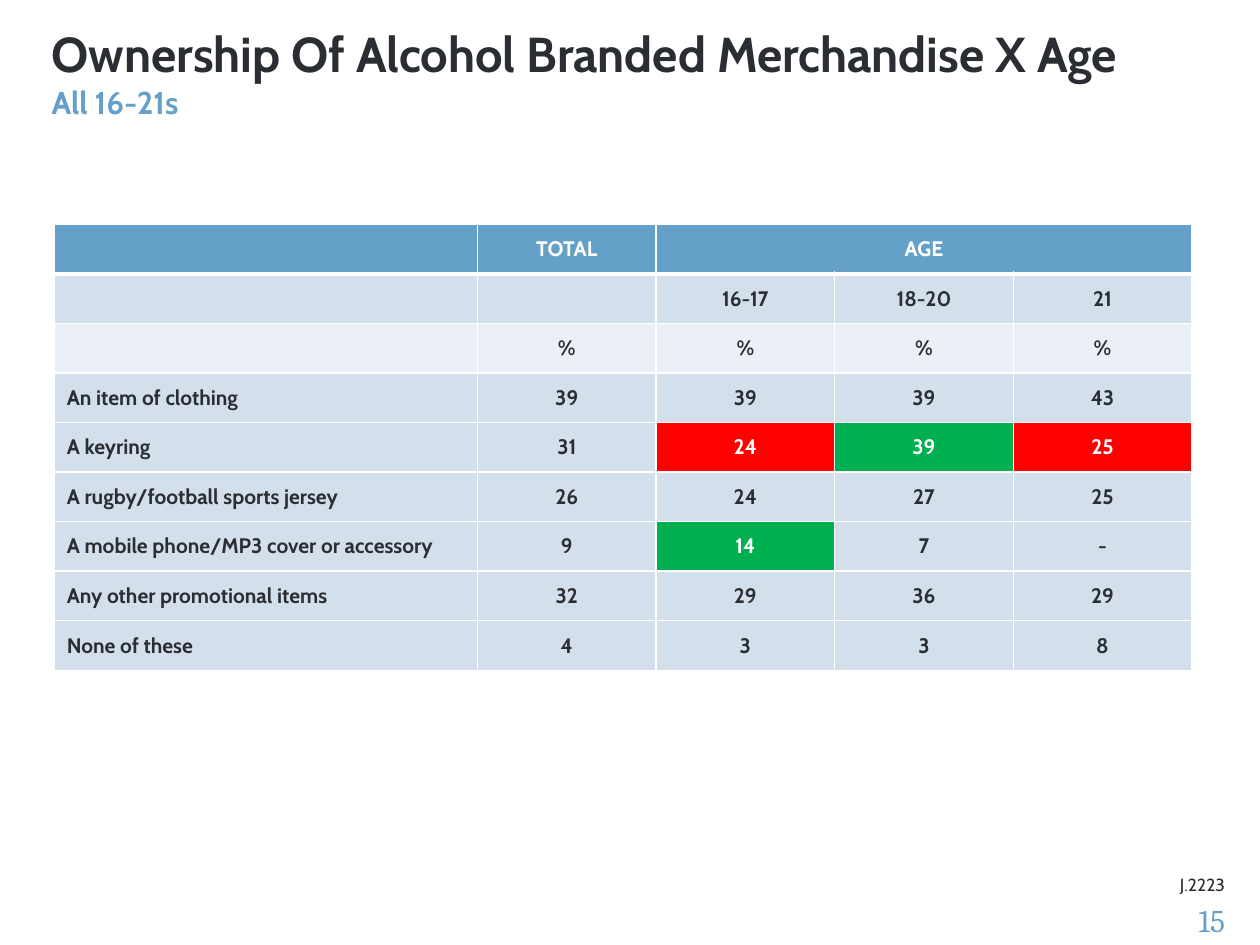
from pptx import Presentation
from pptx.dml.color import RGBColor
from pptx.enum.text import MSO_ANCHOR, PP_ALIGN
from pptx.oxml.ns import qn
from pptx.util import Inches, Pt
from lxml.etree import SubElement

COLORS = {
    "ink": "2A2E33",
    "blue": "64A0C8",
    "band": "D3DFEB",
    "pale": "EAF0F5",
    "white": "FFFFFF",
    "low": "FF0000",
    "high": "00B050",
}
ROWS = [
    ["", "TOTAL", "AGE", "", ""],
    ["", "", "16-17", "18-20", "21"],
    ["", "%", "%", "%", "%"],
    ["An item of clothing", "39", "39", "39", "43"],
    ["A keyring", "31", "24", "39", "25"],
    ["A rugby/football sports jersey", "26", "24", "27", "25"],
    ["A mobile phone/MP3 cover or accessory", "9", "14", "7", "-"],
    ["Any other promotional items", "32", "29", "36", "29"],
    ["None of these", "4", "3", "3", "8"],
]
ROW_FILLS = {0: "blue", 2: "pale"}
HIGHLIGHTS = {(4, 2): "low", (4, 3): "high", (4, 4): "low", (6, 2): "high"}


def rgb(name):
    return RGBColor.from_string(COLORS[name])


def add_span(para, text, size, color, bold=False, font="Cabin"):
    span = para.add_run()
    span.text = text
    span.font.size = Pt(size)
    span.font.name = font
    span.font.bold = bold
    span.font.color.rgb = rgb(color)


def place(shape, left, top, width, height):
    shape.left, shape.top = Inches(left), Inches(top)
    shape.width, shape.height = Inches(width), Inches(height)


def fill_title(page, left, top, width, height):
    title = page.shapes.title
    place(title, left, top, width, height)
    frame = title.text_frame
    frame.word_wrap = True
    frame.vertical_anchor = MSO_ANCHOR.TOP
    para = frame.paragraphs[0]
    para.alignment = PP_ALIGN.LEFT
    add_span(para, "Ownership Of Alcohol Branded Merchandise X Age", 28, "ink", True)
    para.add_line_break()
    add_span(para, "All 16-21s", 18, "blue", True)


def set_borders(cell, widths):
    properties = cell._tc.get_or_add_tcPr()
    for side, width in zip("LRTB", widths):
        line = SubElement(properties, qn(f"a:ln{side}"), w=str(Pt(width)))
        solid = SubElement(line, qn("a:solidFill"))
        SubElement(solid, qn("a:srgbClr"), val=COLORS["white"])


def format_cell(cell, text, row, column):
    header = row == 0
    highlight = HIGHLIGHTS.get((row, column))
    set_borders(cell, (1, 1, 3 if row == 1 else 1, 3 if header else 1))
    cell.fill.solid()
    cell.fill.fore_color.rgb = rgb(highlight or ROW_FILLS.get(row, "band"))
    cell.vertical_anchor = MSO_ANCHOR.MIDDLE
    cell.margin_top = cell.margin_bottom = 0
    para = cell.text_frame.paragraphs[0]
    para.alignment = PP_ALIGN.CENTER if column else PP_ALIGN.LEFT
    if text:
        add_span(para, text, 12, "white" if header or highlight else "ink", True)


def add_ownership_table(page, left, top, width, height):
    columns = len(ROWS[0])
    table = page.shapes.add_table(
        len(ROWS), columns, Inches(left), Inches(top), Inches(width), Inches(height)
    ).table
    label_width = 3.36
    value_width = (width - label_width) / (columns - 1)
    for index, column in enumerate(table.columns):
        column.width = Inches(value_width if index else label_width)
    for row in table.rows:
        row.height = Inches(height / len(ROWS))
    for row, texts in enumerate(ROWS):
        for column, text in enumerate(texts):
            format_cell(table.cell(row, column), text, row, column)
    table.cell(0, 2).merge(table.cell(0, columns - 1))


def add_footer_text(page, text, size, color, font, left, top, width, height):
    box = page.shapes.add_textbox(
        Inches(left), Inches(top), Inches(width), Inches(height)
    )
    frame = box.text_frame
    frame.word_wrap = True
    frame.vertical_anchor = MSO_ANCHOR.BOTTOM
    para = frame.paragraphs[0]
    para.alignment = PP_ALIGN.RIGHT
    add_span(para, text, size, color, font=font)


def main():
    deck = Presentation()
    deck.slide_width, deck.slide_height = Inches(10), Inches(7.5)
    page = deck.slides.add_slide(deck.slide_layouts[5])
    fill_title(page, 0.31, 0.14, 9.49, 1.17)
    add_ownership_table(page, 0.43, 1.78, 9.03, 3.54)
    add_footer_text(page, "J.2223", 10, "ink", "Cabin", 8.51, 6.82, 1.31, 0.33)
    add_footer_text(page, "15", 18, "blue", "Cambria", 8.47, 7.1, 1.35, 0.4)
    deck.save("out.pptx")


if __name__ == "__main__":
    main()
